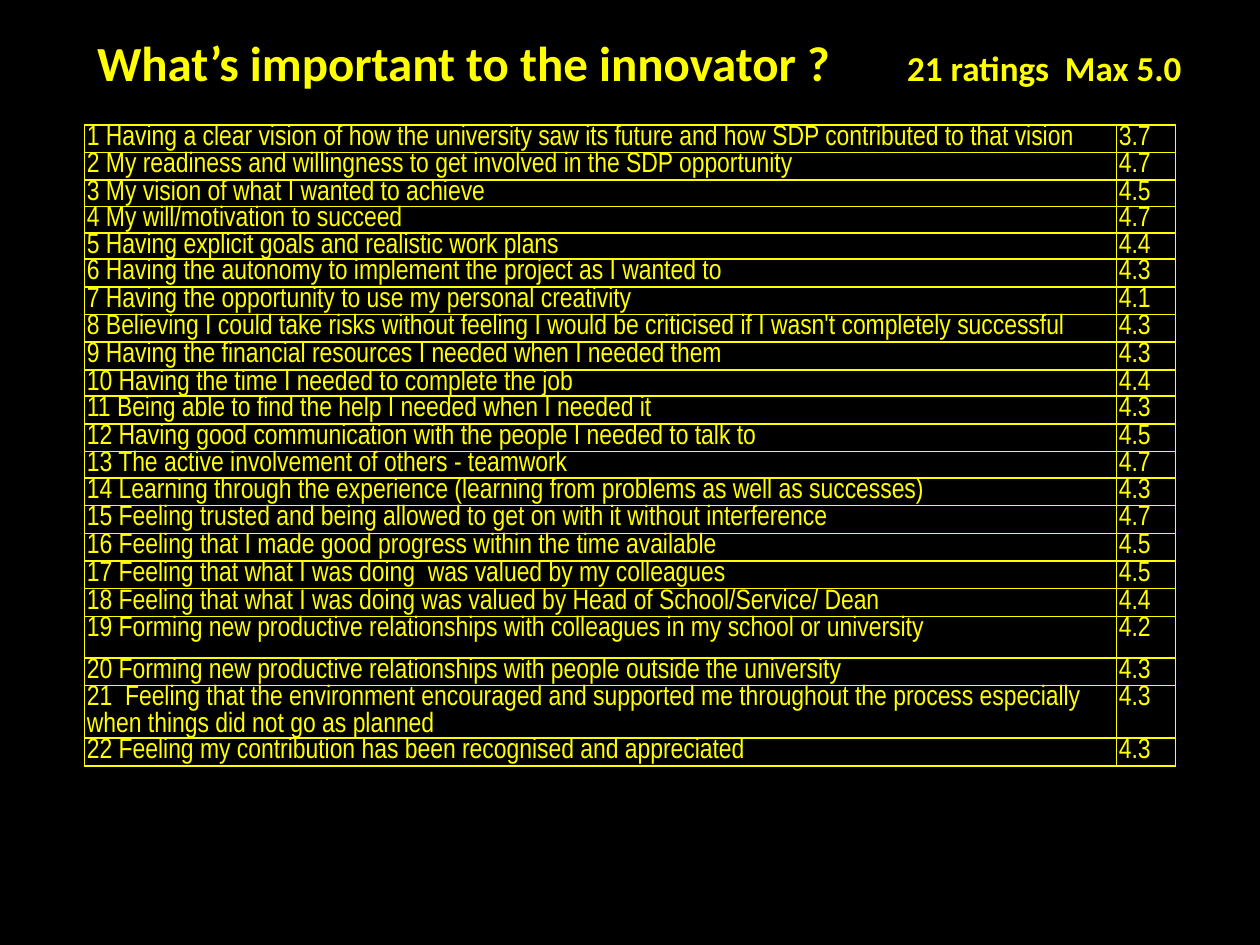
from lxml.etree import SubElement
from pptx import Presentation
from pptx.dml.color import RGBColor
from pptx.enum.text import MSO_ANCHOR, MSO_AUTO_SIZE, PP_ALIGN
from pptx.oxml.ns import qn
from pptx.util import Inches, Pt

YELLOW = "FFFF00"
BLACK = "000000"
ROW_HEIGHT = 0.22
COMPACT_ROWS = {3: 0.11, 4: 0.11, 5: 0.11, 10: 0.11, 13: 0.11, 19: 0.33, 21: 0.33}
COLUMN_WIDTHS = [8.19, 0.47]

FACTORS = [
    ("Having a clear vision of how the university saw its future and how SDP contributed to that vision", "3.7"),
    ("My readiness and willingness to get involved in the SDP opportunity", "4.7"),
    ("My vision of what I wanted to achieve", "4.5"),
    ("My will/motivation to succeed", "4.7"),
    ("Having explicit goals and realistic work plans", "4.4"),
    ("Having the autonomy to implement the project as I wanted to", "4.3"),
    ("Having the opportunity to use my personal creativity", "4.1"),
    ("Believing I could take risks without feeling I would be criticised if I wasn't completely successful", "4.3"),
    ("Having the financial resources I needed when I needed them", "4.3"),
    ("Having the time I needed to complete the job", "4.4"),
    ("Being able to find the help I needed when I needed it", "4.3"),
    ("Having good communication with the people I needed to talk to", "4.5"),
    ("The active involvement of others - teamwork", "4.7"),
    ("Learning through the experience (learning from problems as well as successes)", "4.3"),
    ("Feeling trusted and being allowed to get on with it without interference", "4.7"),
    ("Feeling that I made good progress within the time available", "4.5"),
    ("Feeling that what I was doing  was valued by my colleagues", "4.5"),
    ("Feeling that what I was doing was valued by Head of School/Service/ Dean", "4.4"),
    ("Forming new productive relationships with colleagues in my school or university", "4.2"),
    ("Forming new productive relationships with people outside the university", "4.3"),
    (" Feeling that the environment encouraged and supported me throughout the process especially "
     "when things did not go as planned", "4.3"),
    ("Feeling my contribution has been recognised and appreciated", "4.3"),
]


def color(value):
    return RGBColor.from_string(value)


def set_attributes(target, values):
    for name, value in values.items():
        setattr(target, name, value)


def add_run(paragraph, text, font_format):
    run = paragraph.add_run()
    run.text = text
    set_attributes(run.font, font_format)
    run.font.color.rgb = color(YELLOW)


def add_tab_stop(paragraph, position):
    tabs = SubElement(paragraph._p.get_or_add_pPr(), qn("a:tabLst"))
    SubElement(tabs, qn("a:tab"), pos=str(position), algn="l")


def add_title(slide):
    title = slide.shapes.title
    set_attributes(title, {
        "left": Inches(0.67), "top": Inches(0.21),
        "width": Inches(8.91), "height": Inches(0.57),
    })
    set_attributes(title.text_frame, {
        "word_wrap": True,
        "auto_size": MSO_AUTO_SIZE.NONE,
        "vertical_anchor": MSO_ANCHOR.TOP,
    })
    heading = title.text_frame.paragraphs[0]
    heading.alignment = PP_ALIGN.LEFT
    add_tab_stop(heading, Inches(6.43))
    for text, size in [("What’s important to the innovator ?\t", 28), ("21 ratings  Max 5.0", 20)]:
        add_run(heading, text, {"name": "Calibri", "size": Pt(size), "bold": True})


def add_borders(cell):
    properties = cell._tc.get_or_add_tcPr()
    for side in ("lnL", "lnR", "lnT", "lnB"):
        line = SubElement(properties, qn(f"a:{side}"), w=str(Pt(1)))
        fill = SubElement(line, qn("a:solidFill"))
        SubElement(fill, qn("a:srgbClr"), val=YELLOW)


def fill_cell(cell, text):
    set_attributes(cell, {
        "margin_left": Inches(0.02), "margin_right": Inches(0.02),
        "margin_top": 0, "margin_bottom": 0,
    })
    add_borders(cell)
    cell.fill.background()
    add_run(cell.text_frame.paragraphs[0], text, {"name": "Arial Narrow", "size": Pt(16)})


def add_ratings_table(slide):
    ratings = slide.shapes.add_table(
        len(FACTORS), len(COLUMN_WIDTHS),
        Inches(0.67), Inches(0.99), Inches(sum(COLUMN_WIDTHS)), Inches(6.19),
    ).table
    set_attributes(ratings, {"first_row": False, "horz_banding": False})
    for column, width in zip(ratings.columns, COLUMN_WIDTHS):
        column.width = Inches(width)
    for number, (factor, rating) in enumerate(FACTORS, 1):
        row = ratings.rows[number - 1]
        row.height = Inches(COMPACT_ROWS.get(number, ROW_HEIGHT))
        for cell, text in zip(row.cells, (f"{number} {factor}", rating)):
            fill_cell(cell, text)


def main():
    presentation = Presentation()
    set_attributes(presentation, {"slide_width": Inches(10), "slide_height": Inches(7.5)})
    slide = presentation.slides.add_slide(presentation.slide_layouts[5])
    slide.background.fill.solid()
    slide.background.fill.fore_color.rgb = color(BLACK)
    add_ratings_table(slide)
    add_title(slide)
    presentation.save("out.pptx")


if __name__ == "__main__":
    main()
